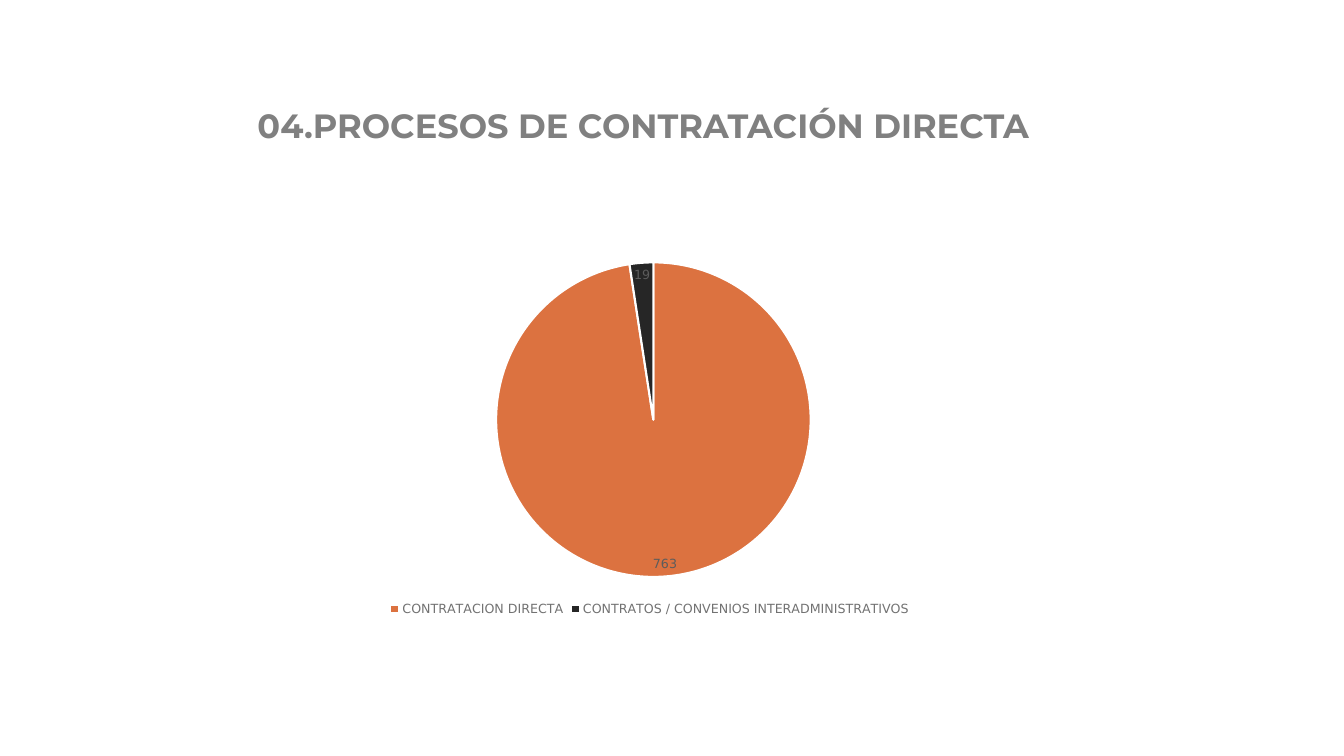
from lxml import etree
from pptx import Presentation
from pptx.chart.data import CategoryChartData
from pptx.dml.color import RGBColor
from pptx.enum.chart import XL_CHART_TYPE, XL_LABEL_POSITION, XL_LEGEND_POSITION
from pptx.enum.text import MSO_ANCHOR, MSO_AUTO_SIZE, PP_ALIGN
from pptx.oxml.ns import qn
from pptx.util import Cm, Pt

PIE = XL_CHART_TYPE.PIE
BEST_FIT = XL_LABEL_POSITION.BEST_FIT
LEGEND_BOTTOM = XL_LEGEND_POSITION.BOTTOM
ANCHOR_BOTTOM = MSO_ANCHOR.BOTTOM
NO_AUTOFIT = MSO_AUTO_SIZE.NONE
CENTER = PP_ALIGN.CENTER

COLORS = {
    "title": "808080",
    "direct": "DC7240",
    "agreements": "262626",
    "legend": "727272",
    "label": "5C5C5C",
    "border": "FFFFFF",
}
TITLE_FONT = "Montserrat"
CHART_FONT = "DejaVu Sans"
CONTRACTS = [
    ("CONTRATACION DIRECTA", 763, "direct"),
    ("CONTRATOS / CONVENIOS INTERADMINISTRATIVOS", 19, "agreements"),
]
PLOT_AREA = {"x": 0.29, "y": 0.09, "w": 0.43, "h": 0.8}


def style_font(font, name, size, color, bold=False):
    font.name = name
    font.size = Pt(size)
    font.bold = bold
    font.color.rgb = RGBColor.from_string(COLORS[color])


def set_title(slide, text):
    title = slide.shapes.title
    title.left, title.top = Cm(3.33), Cm(2.84)
    title.width, title.height = Cm(25.76), Cm(0.97)
    text_frame = title.text_frame
    text_frame.text = text
    text_frame.word_wrap = True
    text_frame.auto_size = NO_AUTOFIT
    text_frame.vertical_anchor = ANCHOR_BOTTOM
    paragraph = text_frame.paragraphs[0]
    paragraph.alignment = CENTER
    paragraph.line_spacing = 0.9
    style_font(paragraph.runs[0].font, TITLE_FONT, 24, "title", True)


def place_plot(chart):
    plot_area = chart.element.find(".//" + qn("c:plotArea"))
    for layout in plot_area.findall(qn("c:layout")):
        plot_area.remove(layout)
    layout = etree.Element(qn("c:layout"))
    manual = etree.SubElement(layout, qn("c:manualLayout"))
    settings = {"layoutTarget": "inner", "xMode": "edge", "yMode": "edge", **PLOT_AREA}
    for tag, value in settings.items():
        etree.SubElement(manual, qn("c:" + tag)).set("val", str(value))
    plot_area.insert(0, layout)


def add_pie(slide):
    chart_data = CategoryChartData()
    chart_data.categories = [name for name, _, _ in CONTRACTS]
    chart_data.add_series("Series 1", [value for _, value, _ in CONTRACTS])
    chart = slide.shapes.add_chart(
        PIE, Cm(7.14), Cm(5.72), Cm(18.47), Cm(9.91), chart_data
    ).chart
    style_font(chart.font, CHART_FONT, 10, "agreements")
    chart.has_title = False
    chart.has_legend = True
    chart.legend.position = LEGEND_BOTTOM
    chart.legend.include_in_layout = False
    style_font(chart.legend.font, CHART_FONT, 9, "legend")

    plot = chart.plots[0]
    plot.vary_by_categories = True
    series = plot.series[0]
    for index, (_, _, color) in enumerate(CONTRACTS):
        point_format = series.points[index].format
        point_format.fill.solid()
        point_format.fill.fore_color.rgb = RGBColor.from_string(COLORS[color])
        point_format.line.color.rgb = RGBColor.from_string(COLORS["border"])
        point_format.line.width = Pt(1.5)
    labels = series.data_labels
    labels.show_value = True
    labels.position = BEST_FIT
    style_font(labels.font, CHART_FONT, 9, "label")
    place_plot(chart)


def main():
    presentation = Presentation()
    presentation.slide_width = Cm(33.87)
    presentation.slide_height = Cm(19.05)
    slide = presentation.slides.add_slide(presentation.slide_layouts[5])
    set_title(slide, "04.PROCESOS DE CONTRATACIÓN DIRECTA")
    add_pie(slide)
    presentation.save("out.pptx")


if __name__ == "__main__":
    main()
